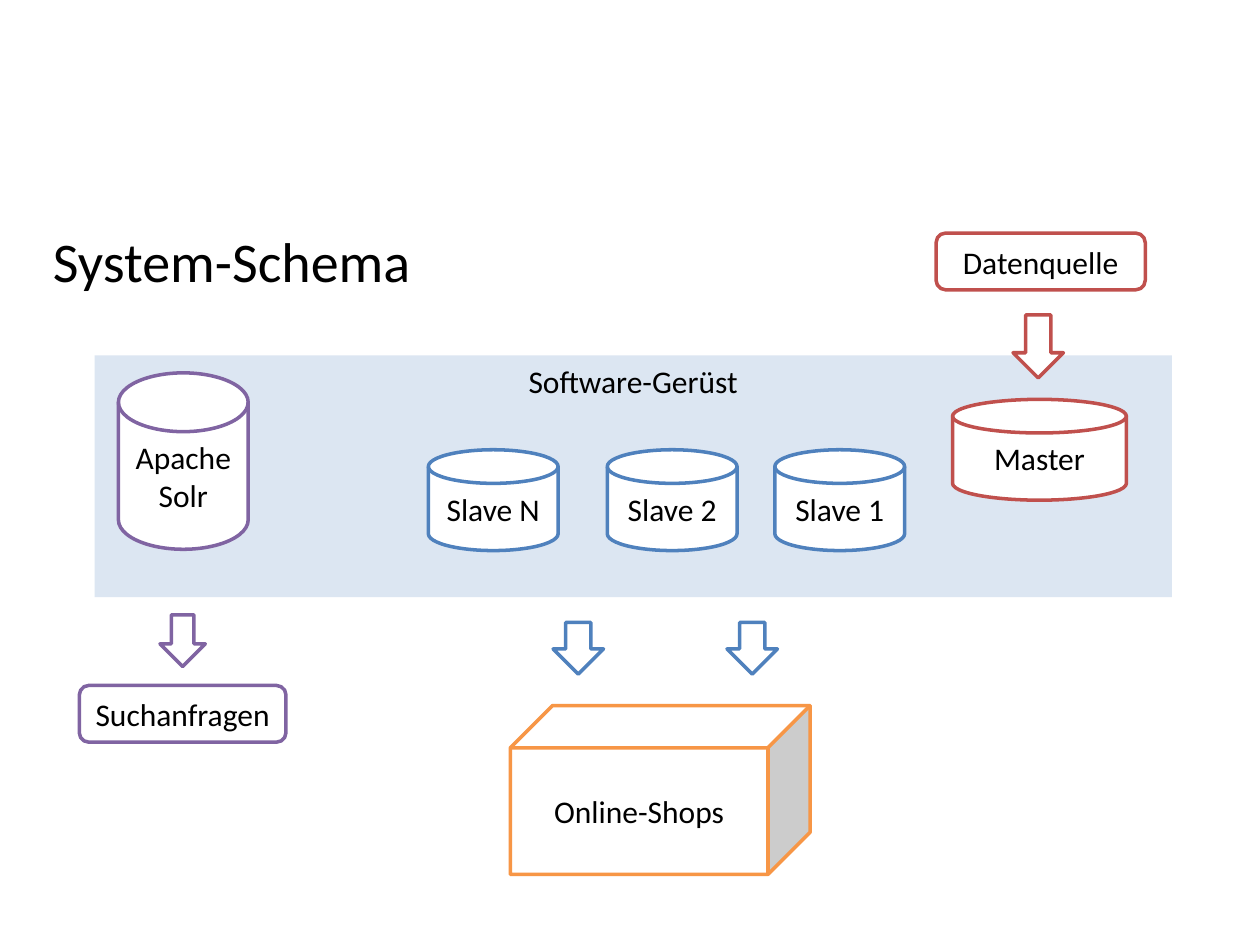
from pptx import Presentation
from pptx.dml.color import RGBColor
from pptx.enum.shapes import MSO_SHAPE as Shape
from pptx.enum.text import MSO_ANCHOR as Anchor, PP_ALIGN as Align
from pptx.util import Inches, Pt

BLACK, WHITE, PALE_BLUE = "000000", "FFFFFF", "DCE6F2"
RED, BLUE, PURPLE, ORANGE = "C0504D", "4F81BD", "8064A2", "F79646"

SLAVES = {"Slave 1": 6.15, "Slave 2": 4.82, "Slave N": 3.4}
SHOP_ARROWS = (5.77, 4.39)


def paint(color_format, color):
    """Set a colour from a hex string."""
    color_format.rgb = RGBColor.from_string(color)


def write(frame, text, size, align, anchor):
    """Fill a text frame, one paragraph per line of text."""
    frame.text = text
    frame.word_wrap = False
    frame.vertical_anchor = anchor
    font_format = {"name": "Calibri", "size": Pt(size), "bold": False}
    for paragraph in frame.paragraphs:
        paragraph.alignment = align
        for attribute, value in font_format.items():
            setattr(paragraph.font, attribute, value)
        paint(paragraph.font.color, BLACK)


def add_title(slide, text, box):
    """Place the heading in the title placeholder."""
    title = slide.shapes.title
    for side, length in zip(("left", "top", "width", "height"), box):
        setattr(title, side, Inches(length))
    write(title.text_frame, text, 32, Align.LEFT, Anchor.TOP)


def add_part(slide, kind, box, outline=None, text="", fill=WHITE, anchor=Anchor.MIDDLE):
    """Add one part of the schema with its optional outline and label."""
    part = slide.shapes.add_shape(kind, *map(Inches, box))
    part.shadow.inherit = False
    part.fill.solid()
    paint(part.fill.fore_color, fill)
    if outline:
        paint(part.line.color, outline)
        part.line.width = Pt(2)
    else:
        part.line.fill.background()
    if text:
        write(part.text_frame, text, 18, Align.CENTER, anchor)


def add_framework(slide):
    """Add the framework panel and its data stores."""
    add_part(slide, Shape.RECTANGLE, (0.75, 2.82, 8.55, 1.92),
             text="Software-Gerüst", fill=PALE_BLUE, anchor=Anchor.TOP)
    store = Shape.FLOWCHART_MAGNETIC_DISK
    add_part(slide, store, (7.56, 3.17, 1.38, 0.8), RED, "Master")
    for slave, left in SLAVES.items():
        add_part(slide, store, (left, 3.57, 1.03, 0.8), BLUE, slave)
    add_part(slide, store, (0.94, 2.96, 1.03, 1.4), PURPLE, "Apache\nSolr")


def add_surroundings(slide):
    """Add the source, the shops and the queries with their arrows."""
    add_part(slide, Shape.ROUNDED_RECTANGLE, (7.43, 1.85, 1.66, 0.45), RED, "Datenquelle")
    add_part(slide, Shape.DOWN_ARROW, (8.04, 2.5, 0.4, 0.5), RED)
    for left in SHOP_ARROWS:
        add_part(slide, Shape.DOWN_ARROW, (left, 4.94, 0.4, 0.41), BLUE)
    add_part(slide, Shape.CUBE, (4.05, 5.6, 2.38, 1.34), ORANGE, "Online-Shops")
    add_part(slide, Shape.DOWN_ARROW, (1.27, 4.88, 0.36, 0.41), PURPLE)
    add_part(slide, Shape.ROUNDED_RECTANGLE, (0.63, 5.44, 1.64, 0.45), PURPLE, "Suchanfragen")


def main():
    """Build the system schema slide."""
    deck = Presentation()
    deck.slide_width, deck.slide_height = Inches(10), Inches(7.5)
    slide = deck.slides.add_slide(deck.slide_layouts.get_by_name("Title Only"))
    add_title(slide, "System-Schema", (0.32, 1.75, 9, 0.75))
    add_framework(slide)
    add_surroundings(slide)
    deck.save("out.pptx")


if __name__ == "__main__":
    main()
